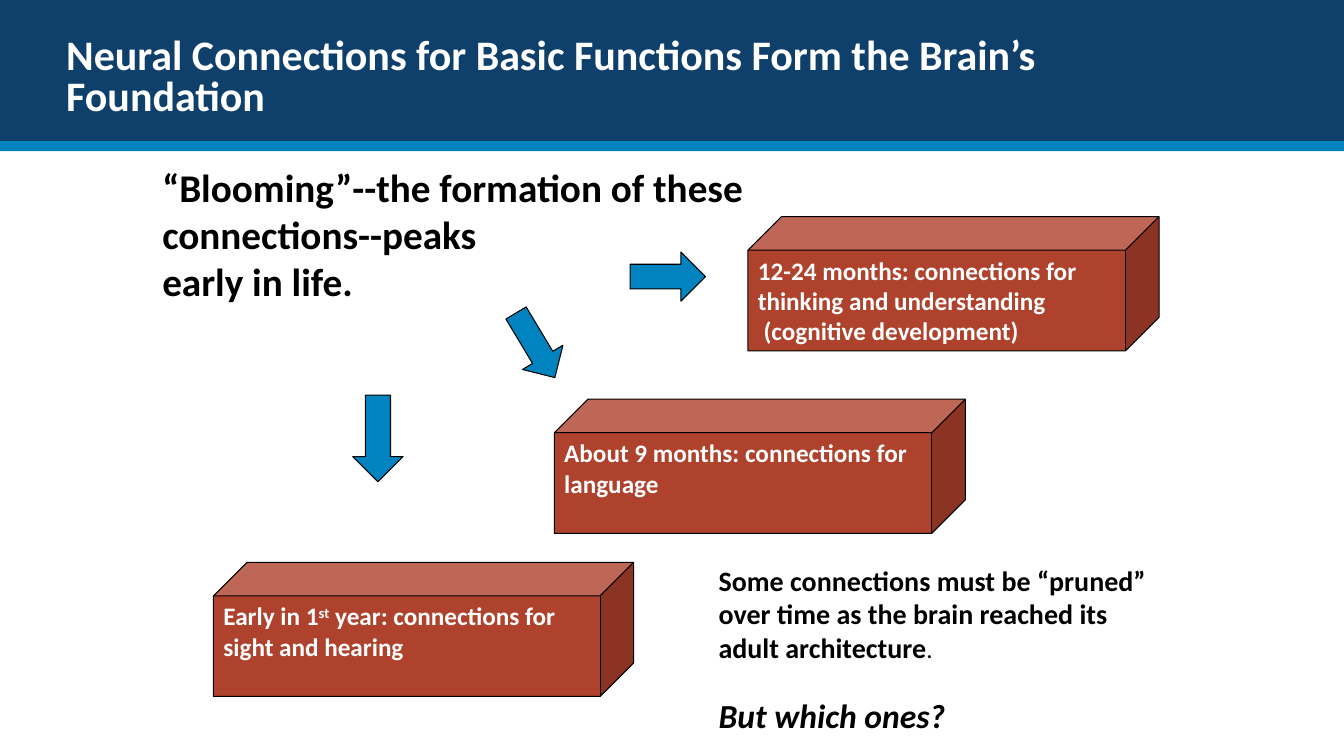
from dataclasses import dataclass

from pptx import Presentation
from pptx.dml.color import RGBColor
from pptx.enum.shapes import MSO_SHAPE as Preset
from pptx.enum.text import MSO_ANCHOR as Anchor, PP_ALIGN as Align
from pptx.util import Cm, Pt

NAVY, BLUE, RUST = "0F406B", "0083BF", "AE422C"
WHITE, BLACK = "FFFFFF", "000000"
FONT = "Calibri"
SLIDE_W, SLIDE_H = 33.87, 19.05


@dataclass
class Box:
    left: float
    top: float
    width: float
    height: float

    def emu(self) -> tuple:
        return Cm(self.left), Cm(self.top), Cm(self.width), Cm(self.height)


@dataclass
class Run:
    text: str
    size: float
    color: str = BLACK
    bold: bool = True
    italic: bool = False
    superscript: bool = False


@dataclass
class Arrow:
    box: Box
    preset: Preset
    rotation: float = 0


@dataclass
class Stage:
    box: Box
    paragraphs: list


def rgb(value: str) -> RGBColor:
    return RGBColor.from_string(value)


def add_preset(slide, preset: Preset, box: Box, fill: str, outlined: bool = True):
    sp = slide.shapes.add_shape(preset, *box.emu())
    sp.shadow.inherit = False
    sp.fill.solid()
    sp.fill.fore_color.rgb = rgb(fill)
    if outlined:
        sp.line.color.rgb = rgb(BLACK)
        sp.line.width = Pt(0.75)
    else:
        sp.line.fill.background()
    return sp


def write(sp, paragraphs: list, anchor: Anchor = Anchor.TOP, wrap: bool = True):
    tf = sp.text_frame
    tf.word_wrap = wrap
    tf.vertical_anchor = anchor
    for i, runs in enumerate(paragraphs):
        p = tf.paragraphs[0] if i == 0 else tf.add_paragraph()
        p.alignment = Align.LEFT
        for run in runs:
            r = p.add_run()
            r.text = run.text
            r.font.name = FONT
            r.font.size = Pt(run.size)
            r.font.bold = run.bold
            r.font.italic = run.italic
            r.font.color.rgb = rgb(run.color)
            if run.superscript:
                r._r.get_or_add_rPr().set("baseline", "30000")
    return tf


def add_text(slide, box: Box, paragraphs: list, **layout):
    return write(slide.shapes.add_textbox(*box.emu()), paragraphs, **layout)


def label(text: str, superscript: bool = False) -> Run:
    return Run(text, 18, WHITE, superscript=superscript)


ARROWS = [
    Arrow(Box(8.89, 9.96, 1.27, 2.18), Preset.DOWN_ARROW),
    Arrow(Box(12.9, 7.75, 1.19, 1.9), Preset.DOWN_ARROW, 329),
    Arrow(Box(15.88, 6.35, 1.9, 1.24), Preset.RIGHT_ARROW),
]

STAGES = [
    Stage(Box(5.38, 14.17, 10.59, 3.38),
          [[label("Early in 1"), label("st", superscript=True),
            label(" year: connections for sight and hearing")]]),
    Stage(Box(13.97, 10.06, 10.36, 3.38),
          [[label("About 9 months: connections for language")]]),
    Stage(Box(18.85, 5.46, 10.36, 3.38),
          [[label("12-24 months: connections for thinking and understanding")],
           [label(" (cognitive development)")]]),
]

BLOOMING = ["“Blooming”--the formation of these", "connections--peaks", "early in life."]


def main() -> None:
    prs = Presentation()
    prs.slide_width, prs.slide_height = Cm(SLIDE_W), Cm(SLIDE_H)
    s = prs.slides.add_slide(prs.slide_layouts[6])

    # Header band and title
    add_preset(s, Preset.RECTANGLE, Box(0, 0, SLIDE_W, 3.56), NAVY, outlined=False)
    add_preset(s, Preset.RECTANGLE, Box(0, 3.56, SLIDE_W, 0.25), BLUE, outlined=False)
    title = add_text(
        s, Box(1.42, 1.02, 26.64, 2.11),
        [[Run("Neural Connections for Basic Functions Form the Brain’s Foundation",
              30, WHITE)]], anchor=Anchor.BOTTOM)
    title.paragraphs[0].line_spacing = 0.8

    # Opening statement
    add_text(s, Box(3.84, 3.99, 15.32, 4.62),
             [[Run(line, 28)] for line in BLOOMING], wrap=False)

    # Arrows to the stages
    for arrow in ARROWS:
        sp = add_preset(s, arrow.preset, arrow.box, BLUE)
        sp.rotation = arrow.rotation

    # Stages of development
    for stage in STAGES:
        write(add_preset(s, Preset.CUBE, stage.box, RUST), stage.paragraphs)

    # Closing question
    closing = add_text(
        s, Box(17.86, 14.07, 11.4, 4.62),
        [[Run("Some connections must be “pruned” over time as the brain "
              "reached its adult architecture", 20), Run(".", 18, bold=False)],
         [Run("But which ones?", 24, italic=True)]])
    closing.paragraphs[1].space_before = Pt(22)

    prs.save("out.pptx")


if __name__ == "__main__":
    main()
